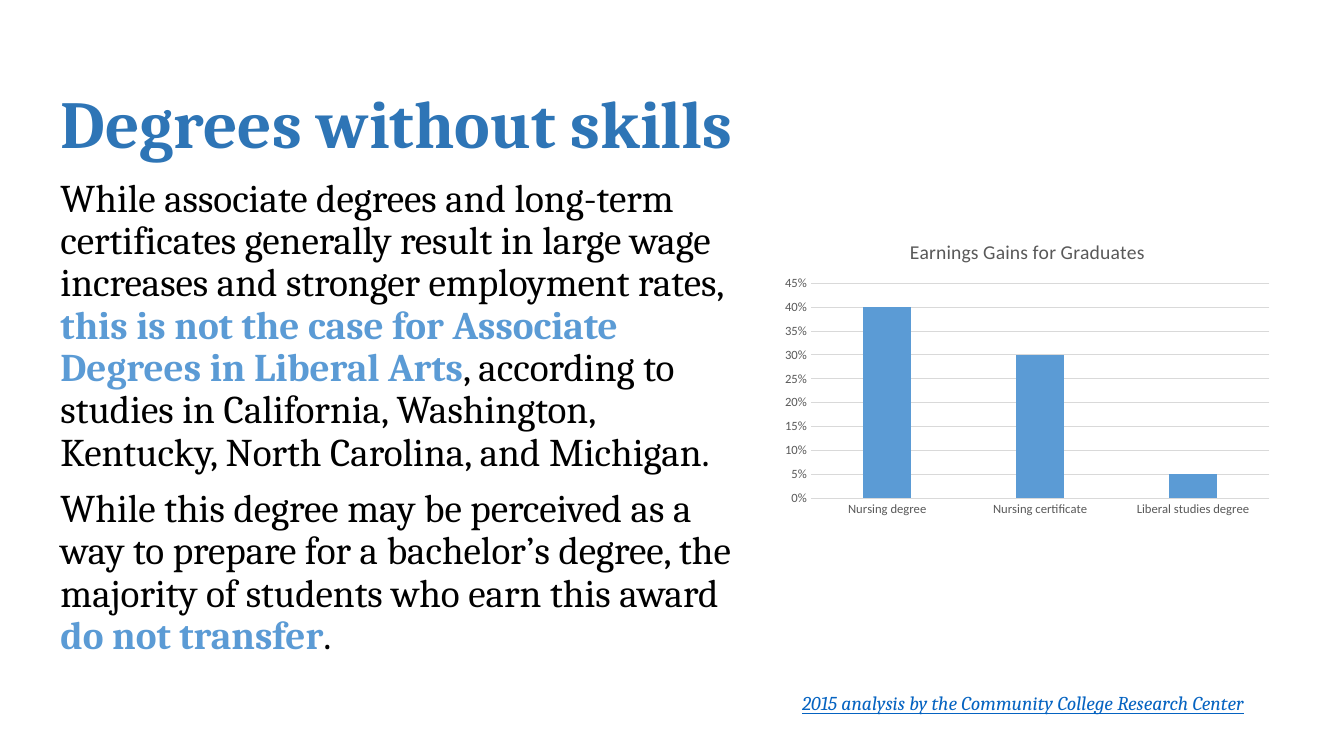
import collections
import dataclasses

import lxml.etree
import pptx
import pptx.chart.data
import pptx.dml.color
import pptx.enum.chart
import pptx.enum.text
import pptx.oxml.ns
import pptx.util

Box = collections.namedtuple("Box", "left top width height")


@dataclasses.dataclass(frozen=True)
class Theme:
    serif: str = "Cambria"
    sans: str = "Calibri"
    heading: str = "2E75B6"
    accent: str = "5B9BD5"
    ink: str = "000000"
    link: str = "0563C1"
    label: str = "595959"
    rule: str = "D9D9D9"
    title_size: int = 48
    body_size: int = 28
    source_size: int = 14
    chart_title_size: int = 14
    axis_size: int = 9


THEME = Theme()
WIDTH = pptx.util.Inches(13.33)
HEIGHT = pptx.util.Inches(7.5)
TITLE = "Degrees without skills"
BODY = [
    [
        ("While associate degrees and long-term certificates generally result in large wage increases and stronger employment rates, ", False),
        ("this is not the case for Associate Degrees in Liberal Arts", True),
        (", according to studies in California, Washington, Kentucky, North Carolina, and Michigan.", False),
    ],
    [
        ("While this degree may be perceived as a way to prepare for a bachelor’s degree, the majority of students who earn this award ", False),
        ("do not transfer", True),
        (".", False),
    ],
]
SOURCE = "2015 analysis by the Community College Research Center"
CHART_TITLE = "Earnings Gains for Graduates"
GAINS = {"Nursing degree": 0.4, "Nursing certificate": 0.3, "Liberal studies degree": 0.05}


def share(left, top, width, height):
    return Box(int(left * WIDTH), int(top * HEIGHT), int(width * WIDTH), int(height * HEIGHT))


def part(box, top, height):
    return Box(box.left, box.top + int(top * box.height), box.width, int(height * box.height))


def place(shape, box):
    shape.left, shape.top, shape.width, shape.height = box


def style(font, name, size, color, bold=False):
    font.name = name
    font.size = pptx.util.Pt(size)
    font.bold = bold
    font.color.rgb = pptx.dml.color.RGBColor.from_string(color)


def prepare(shape, box):
    place(shape, box)
    frame = shape.text_frame
    frame.word_wrap = True
    frame.auto_size = pptx.enum.text.MSO_AUTO_SIZE.NONE
    frame.vertical_anchor = pptx.enum.text.MSO_ANCHOR.TOP
    return frame


def add_story(page, box):
    frame = prepare(page.shapes.title, part(box, 0, 0.146))
    frame.text = TITLE
    para = frame.paragraphs[0]
    para.alignment = pptx.enum.text.PP_ALIGN.LEFT
    para.line_spacing = 0.9
    style(para.runs[0].font, THEME.serif, THEME.title_size, THEME.heading, True)

    frame = prepare(page.placeholders[1], part(box, 0.146, 0.854))
    for index, pieces in enumerate(BODY):
        para = frame.add_paragraph() if index else frame.paragraphs[0]
        para.line_spacing = 0.9
        para.space_before = pptx.util.Pt(10 if index else 0)
        settings = para._p.get_or_add_pPr()
        settings.set("marL", "0")
        settings.set("indent", "0")
        lxml.etree.SubElement(settings, pptx.oxml.ns.qn("a:buNone"))
        for text, strong in pieces:
            span = para.add_run()
            span.text = text
            style(span.font, THEME.serif, THEME.body_size, THEME.accent if strong else THEME.ink, strong)


def add_source(page, box):
    frame = page.shapes.add_textbox(*box).text_frame
    frame.word_wrap = True
    frame.text = SOURCE
    para = frame.paragraphs[0]
    para.alignment = pptx.enum.text.PP_ALIGN.RIGHT
    font = para.runs[0].font
    style(font, THEME.serif, THEME.source_size, THEME.link)
    font.italic = True
    font.underline = True


def set_plot_area(chart, **shares):
    area = chart._chartSpace.chart.plotArea
    tag = pptx.oxml.ns.qn
    for old in area.findall(tag("c:layout")):
        area.remove(old)
    layout = lxml.etree.Element(tag("c:layout"))
    area.insert(0, layout)
    manual = lxml.etree.SubElement(layout, tag("c:manualLayout"))
    settings = {"layoutTarget": "inner", "xMode": "edge", "yMode": "edge", **shares}
    for name, value in settings.items():
        lxml.etree.SubElement(manual, tag("c:" + name)).set("val", str(value))


def add_gains_chart(page, box):
    data = pptx.chart.data.CategoryChartData(number_format="0%")
    data.categories = list(GAINS)
    data.add_series("Series 1", list(GAINS.values()))
    kind = pptx.enum.chart.XL_CHART_TYPE.COLUMN_CLUSTERED
    chart = page.shapes.add_chart(kind, *box, data).chart
    chart.has_legend = False
    style(chart.font, THEME.sans, 10, THEME.ink)
    chart.has_title = True
    chart.chart_title.include_in_layout = False
    frame = chart.chart_title.text_frame
    frame.text = CHART_TITLE
    style(frame.paragraphs[0].runs[0].font, THEME.sans, THEME.chart_title_size, THEME.label)
    set_plot_area(chart, x=0.07, y=0.2, w=0.91, h=0.71)

    plot = chart.plots[0]
    plot.gap_width = 219
    plot.overlap = -27
    plot.vary_by_categories = False
    fill = plot.series[0].format.fill
    fill.solid()
    fill.fore_color.rgb = pptx.dml.color.RGBColor.from_string(THEME.accent)

    values = chart.value_axis
    values.minimum_scale = 0
    values.maximum_scale = 0.45
    values.major_unit = 0.05
    values.has_major_gridlines = True
    values.tick_labels.number_format = "0%"
    values.tick_labels.number_format_is_linked = False
    values.format.line.fill.background()
    for axis in (chart.category_axis, values):
        axis.major_tick_mark = pptx.enum.chart.XL_TICK_MARK.NONE
        style(axis.tick_labels.font, THEME.sans, THEME.axis_size, THEME.label)
    for line in (chart.category_axis.format.line, values.major_gridlines.format.line):
        line.width = pptx.util.Pt(0.75)
        line.color.rgb = pptx.dml.color.RGBColor.from_string(THEME.rule)


def main():
    deck = pptx.Presentation()
    deck.slide_width = WIDTH
    deck.slide_height = HEIGHT
    page = deck.slides.add_slide(deck.slide_layouts[1])
    add_story(page, share(0.0375, 0.113, 0.526, 0.795))
    add_source(page, share(0.536, 0.908, 0.397, 0.045))
    add_gains_chart(page, share(0.577, 0.295, 0.375, 0.4))
    deck.save("out.pptx")


if __name__ == "__main__":
    main()
